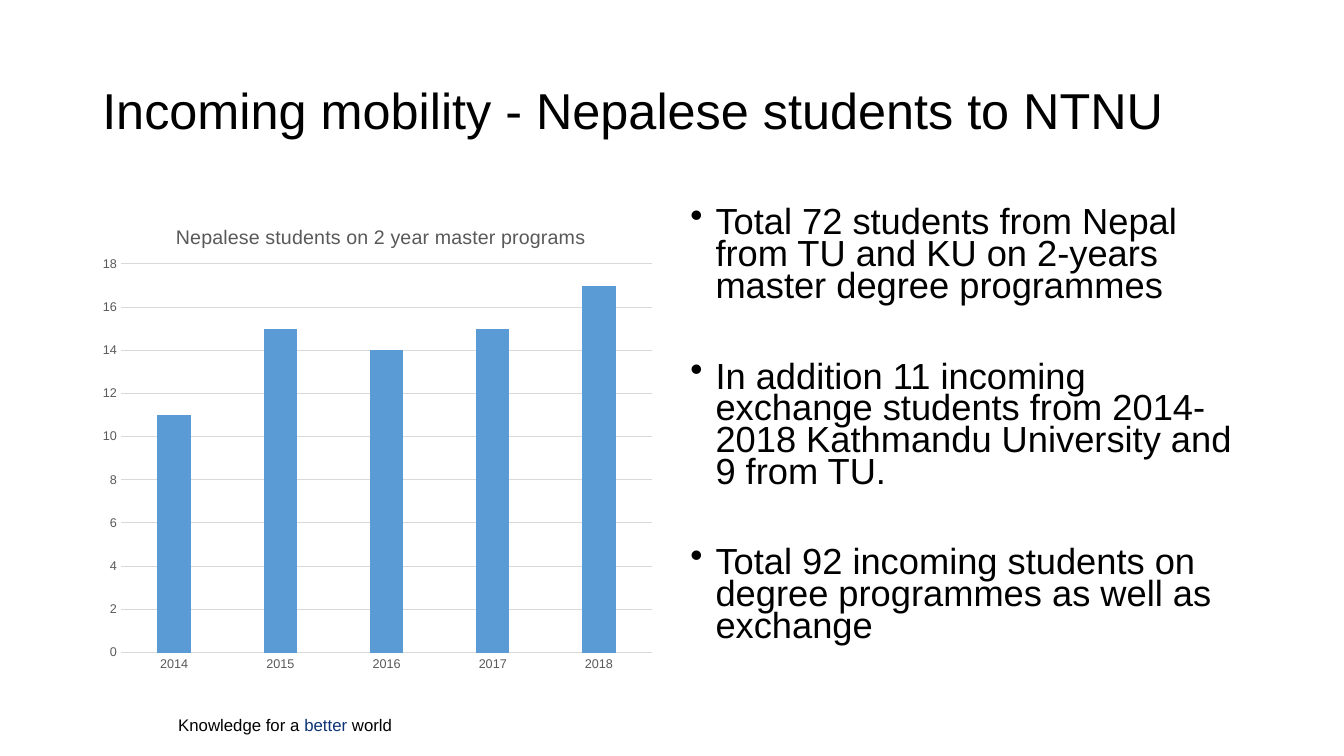
from dataclasses import dataclass

import pptx
import pptx.chart.data
import pptx.dml.color
import pptx.enum.chart
import pptx.enum.text
import pptx.oxml
import pptx.oxml.ns
import pptx.util
from lxml import etree

Pt = pptx.util.Pt
RGBColor = pptx.dml.color.RGBColor
Anchor = pptx.enum.text.MSO_ANCHOR

BLACK = RGBColor(0x00, 0x00, 0x00)
NAVY = RGBColor(0x0D, 0x34, 0x75)
BLUE = RGBColor(0x5B, 0x9B, 0xD5)
GRAY = RGBColor(0x59, 0x59, 0x59)
LIGHT_GRAY = RGBColor(0xD9, 0xD9, 0xD9)
FONT = "Arial"
BULLET_INDENT = 18


@dataclass(frozen=True)
class Box:
    left: float
    top: float
    width: float
    height: float

    def lengths(self) -> list:
        return [Pt(v) for v in (self.left, self.top, self.width, self.height)]


@dataclass(frozen=True)
class Run:
    text: str
    color: RGBColor = BLACK


TITLE_BOX = Box(66, 28.8, 828, 104.4)
CHART_BOX = Box(66, 144, 408, 342.72)
POINTS_BOX = Box(486, 144, 408, 342.72)
SLOGAN_BOX = Box(120.24, 506.88, 177.12, 21.6)

POINTS = [
    [Run("Total 72 students from Nepal from TU and KU on 2-years master degree programmes")],
    [Run("In addition 11 incoming exchange students from 2014-2018 "
         "Kathmandu University and 9 from TU.")],
    [Run("Total 92 incoming students on degree programmes as well as exchange")],
]
SLOGAN = [Run("Knowledge for a "), Run("better ", NAVY), Run("world")]
STUDENTS_BY_YEAR = {"2014": 11, "2015": 15, "2016": 14, "2017": 15, "2018": 17}


def style_font(font, size: float, color: RGBColor) -> None:
    font.name = FONT
    font.size = Pt(size)
    font.bold = False
    font.color.rgb = color


def add_bullet(paragraph) -> None:
    properties = paragraph._p.get_or_add_pPr()
    properties.set("marL", str(Pt(BULLET_INDENT)))
    properties.set("indent", str(-Pt(BULLET_INDENT)))
    bullet = etree.SubElement(properties, pptx.oxml.ns.qn("a:buChar"))
    bullet.set("char", "•")


def add_text(slide, box: Box, paragraphs: list[list[Run]], *, size: float,
             anchor: Anchor = Anchor.TOP, line_spacing: float = 1.0,
             gap: float = 0, margin_top: float = 3.6, bulleted: bool = False) -> None:
    frame = slide.shapes.add_textbox(*box.lengths()).text_frame
    frame.word_wrap = True
    frame.vertical_anchor = anchor
    frame.margin_top = Pt(margin_top)
    for index, runs in enumerate(paragraphs):
        paragraph = frame.add_paragraph() if index else frame.paragraphs[0]
        if bulleted:
            add_bullet(paragraph)
        paragraph.line_spacing = line_spacing
        if index:
            paragraph.space_before = Pt(gap)
        for part in runs:
            run = paragraph.add_run()
            run.text = part.text
            style_font(run.font, size, part.color)


def place_in_chart(parent, index: int, **fractions: float) -> None:
    """Fix a chart part at fractions of the chart's width and height."""
    qn = pptx.oxml.ns.qn
    for automatic in parent.findall(qn("c:layout")):
        parent.remove(automatic)
    layout = etree.Element(qn("c:layout"))
    manual = etree.SubElement(layout, qn("c:manualLayout"))
    settings = {"xMode": "edge", "yMode": "edge", **fractions}
    if "w" in fractions:
        settings = {"layoutTarget": "inner", **settings}
    for name, value in settings.items():
        etree.SubElement(manual, qn(f"c:{name}")).set("val", str(value))
    parent.insert(index, layout)


def add_student_chart(slide) -> None:
    students = pptx.chart.data.CategoryChartData()
    students.categories = list(STUDENTS_BY_YEAR)
    students.add_series("Series 1", list(STUDENTS_BY_YEAR.values()))
    chart = slide.shapes.add_chart(
        pptx.enum.chart.XL_CHART_TYPE.COLUMN_CLUSTERED, *CHART_BOX.lengths(), students
    ).chart
    style_font(chart.font, 10, BLACK)
    chart.has_legend = False

    chart.has_title = True
    heading = chart.chart_title.text_frame
    heading.text = "Nepalese students on 2 year master programs"
    style_font(heading.paragraphs[0].runs[0].font, 14, GRAY)

    columns = chart.plots[0]
    columns.gap_width = 219
    columns.overlap = -27
    columns.vary_by_categories = False
    fill = columns.series[0].format.fill
    fill.solid()
    fill.fore_color.rgb = BLUE

    years, counts = chart.category_axis, chart.value_axis
    for axis in (years, counts):
        axis.major_tick_mark = pptx.enum.chart.XL_TICK_MARK.NONE
        axis.minor_tick_mark = pptx.enum.chart.XL_TICK_MARK.NONE
        style_font(axis.tick_labels.font, 9, GRAY)
    counts.minimum_scale, counts.maximum_scale, counts.major_unit = 0, 18, 2
    counts.format.line.fill.background()
    for line in (years.format.line, counts.major_gridlines.format.line):
        line.color.rgb = LIGHT_GRAY
        line.width = Pt(0.75)

    chart_root = chart._chartSpace
    place_in_chart(chart_root.xpath("c:chart/c:title")[0], 1, x=0.14, y=0.04)
    place_in_chart(chart_root.xpath("c:chart/c:plotArea")[0], 0,
                   x=0.05, y=0.13, w=0.93, h=0.81)


def main() -> None:
    deck = pptx.Presentation()
    deck.slide_width, deck.slide_height = Pt(960), Pt(540)
    slide = deck.slides.add_slide(deck.slide_layouts[6])
    add_text(slide, SLOGAN_BOX, [SLOGAN], size=12)
    add_text(slide, TITLE_BOX, [[Run("Incoming mobility - Nepalese students to NTNU")]],
             size=36, anchor=Anchor.MIDDLE, line_spacing=0.9)
    add_text(slide, POINTS_BOX, POINTS, size=25.9, line_spacing=0.73, gap=42,
             margin_top=5.6, bulleted=True)
    add_student_chart(slide)
    deck.save("out.pptx")


if __name__ == "__main__":
    main()
